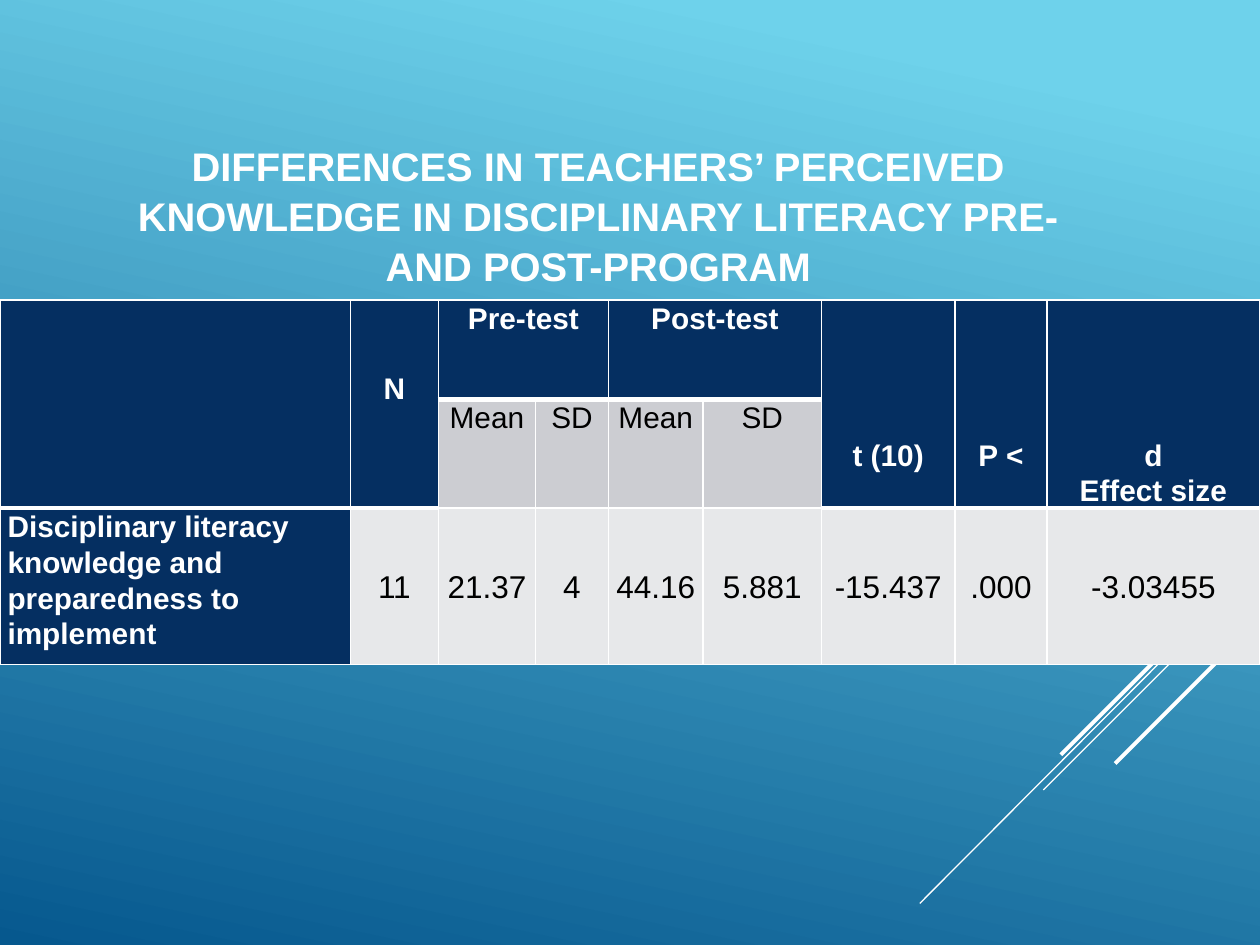
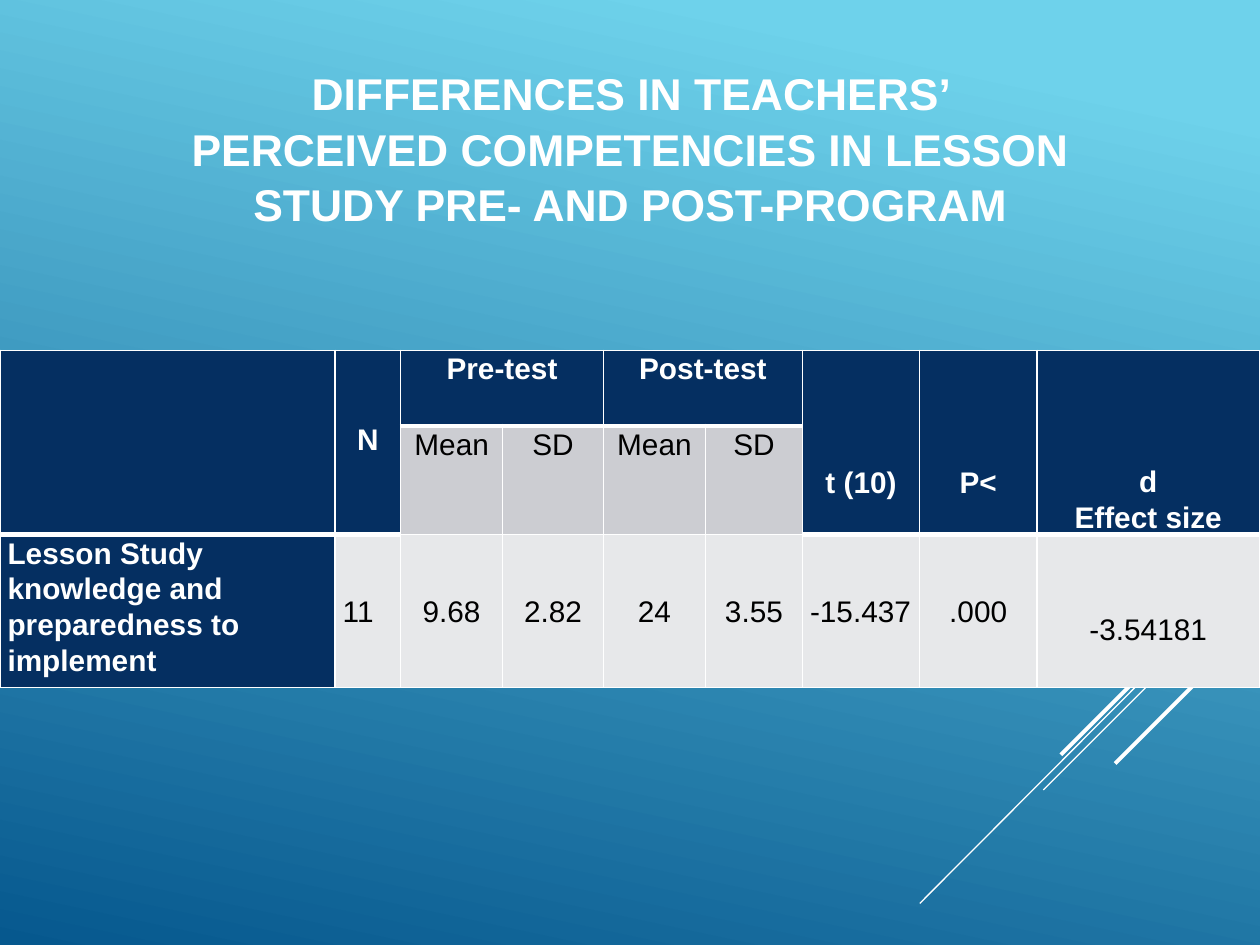
from lxml.etree import SubElement
from pptx import Presentation
from pptx.dml.color import RGBColor
from pptx.enum.shapes import MSO_CONNECTOR
from pptx.enum.text import MSO_ANCHOR as Anchor, PP_ALIGN as Align
from pptx.oxml.ns import qn
from pptx.util import Inches, Pt

FONT = "Arial"
COLORS = {
    "white": "FFFFFF", "black": "000000", "navy": "052F61",
    "subheader": "CCCDD2", "value": "E7E8EA",
    "sky": "6ED2EB", "deep": "06588E",
}
LINE_HEIGHT = 0.28  # one line of table text, in inches

# start x, start y, end x, end y, width in points
RAYS = [
    (10, 4.26, 9.17, 5.09, 0.75),
    (10, 4.46, 7.3, 7.17, 0.75),
    (10, 4.55, 8.28, 6.27, 0.75),
    (9.99, 4.42, 8.42, 5.99, 2.25),
    (9.99, 4.92, 8.85, 6.06, 2.25),
]

# column, columns spanned, rows spanned, text, anchor, lines free above, lines free below
HEADERS = [
    (0, 1, 2, "", Anchor.TOP, 0, 0),
    (1, 1, 2, "N", Anchor.TOP, 2, 0),
    (2, 2, 1, "Pre-test", Anchor.TOP, 0, 0),
    (4, 2, 1, "Post-test", Anchor.TOP, 0, 0),
    (6, 1, 2, "t (10)", Anchor.BOTTOM, 0, 1),
    (7, 1, 2, "{p_label}", Anchor.BOTTOM, 0, 1),
    (8, 1, 2, "d\nEffect size", Anchor.BOTTOM, 0, 0),
]
SUBHEADERS = ["Mean", "SD", "Mean", "SD"]
FIRST_SUBHEADER = 2

RESULTS = [
    {
        "title": "DIFFERENCES IN TEACHERS’ PERCEIVED KNOWLEDGE IN DISCIPLINARY "
                 "LITERACY PRE- AND POST-PROGRAM",
        "title_box": (0.67, 1.13, 8.16, 1.15), "title_size": 22.8,
        "top": 2.38, "rows": [0.79, 0.85, 1.24],
        "columns": [2.78, 0.7, 0.77, 0.58, 0.75, 0.94, 1.06, 0.73, 1.69],
        "p_label": "P <",
        "label": "Disciplinary literacy knowledge and preparedness to implement",
        "values": ["11", "21.37", "4", "44.16", "5.881", "-15.437", ".000", "-3.03455"],
        "value_size": 18, "left_aligned": [], "lowered": [],
    },
    {
        "title": "DIFFERENCES IN TEACHERS’ PERCEIVED COMPETENCIES IN LESSON "
                 "STUDY PRE- AND POST-PROGRAM",
        "title_box": (1.37, 0.5, 7.27, 1.34), "title_size": 25.4,
        "top": 2.78, "rows": [0.6, 0.85, 1.21],
        "columns": [2.66, 0.52, 0.81, 0.8, 0.81, 0.77, 0.93, 0.93, 1.77],
        "p_label": "P<",
        "label": "Lesson Study knowledge and preparedness to implement",
        "values": ["11", "9.68", "2.82", "24", "3.55", "-15.437", ".000", "-3.54181"],
        "value_size": 17, "left_aligned": [1, 6], "lowered": [8],
    },
]


def rgb(name):
    return RGBColor.from_string(COLORS[name])


def style_text(frame, size, color, bold, align, spacing):
    for para in frame.paragraphs:
        para.alignment = align
        para.line_spacing = spacing
        for span in para.runs:
            span.font.name = FONT
            span.font.size = Pt(size)
            span.font.bold = bold
            span.font.color.rgb = rgb(color)


def paint_background(page):
    fill = page.background.fill
    fill.gradient()
    fill.gradient_angle = 258
    for stop, color, position in zip(fill.gradient_stops, ("sky", "deep"), (0.1, 1)):
        stop.color.rgb = rgb(color)
        stop.position = position


def add_rays(page):
    for x1, y1, x2, y2, width in RAYS:
        ray = page.shapes.add_connector(
            MSO_CONNECTOR.STRAIGHT, Inches(x1), Inches(y1), Inches(x2), Inches(y2))
        ray.line.color.rgb = rgb("white")
        ray.line.width = Pt(width)
        SubElement(ray._element.spPr, qn("a:effectLst"))


def add_title(page, result):
    box = page.shapes.add_textbox(*map(Inches, result["title_box"]))
    frame = box.text_frame
    frame.word_wrap = True
    frame.vertical_anchor = Anchor.MIDDLE
    frame.text = result["title"]
    style_text(frame, result["title_size"], "white", True, Align.CENTER, 1.04)


def rule_below(row, column):
    """Width of the rule under a cell: thick where a header cell ends."""
    under_group = FIRST_SUBHEADER <= column < FIRST_SUBHEADER + len(SUBHEADERS)
    return 3 if (row == 0 and under_group) or (row == 1 and not under_group) else 1


def add_borders(cell, row, column):
    properties = cell._tc.get_or_add_tcPr()
    widths = {"L": 1, "R": 1, "T": rule_below(row - 1, column), "B": rule_below(row, column)}
    for side, width in widths.items():
        border = SubElement(properties, qn(f"a:ln{side}"), w=str(Pt(width)))
        SubElement(SubElement(border, qn("a:solidFill")), qn("a:srgbClr"), val=COLORS["white"])


def fill_cell(cell, text, fill, color, bold=False, size=17, align=Align.CENTER,
              anchor=Anchor.TOP, above=0, below=0):
    cell.fill.solid()
    cell.fill.fore_color.rgb = rgb(fill)
    cell.margin_left = cell.margin_right = Inches(0.06)
    cell.margin_top = Inches(above * LINE_HEIGHT)
    cell.margin_bottom = Inches(below * LINE_HEIGHT)
    cell.vertical_anchor = anchor
    cell.text_frame.text = text
    style_text(cell.text_frame, size, color, bold, align, 1.07)


def add_results_table(page, result):
    rows, columns = result["rows"], result["columns"]
    table = page.shapes.add_table(
        len(rows), len(columns), 0, Inches(result["top"]),
        Inches(sum(columns)), Inches(sum(rows))).table
    table.first_row = table.horz_banding = False
    for row, height in zip(table.rows, rows):
        row.height = Inches(height)
    for column, width in zip(table.columns, columns):
        column.width = Inches(width)
    for row in range(len(rows)):
        for column in range(len(columns)):
            add_borders(table.cell(row, column), row, column)

    for column, across, down, text, anchor, above, below in HEADERS:
        cell = table.cell(0, column)
        cell.merge(table.cell(down - 1, column + across - 1))
        fill_cell(cell, text.format(**result), "navy", "white", True,
                  anchor=anchor, above=above, below=below)
    for column, text in enumerate(SUBHEADERS, FIRST_SUBHEADER):
        fill_cell(table.cell(1, column), text, "subheader", "black")
    fill_cell(table.cell(2, 0), result["label"], "navy", "white", True, align=Align.LEFT)
    for column, text in enumerate(result["values"], 1):
        align = Align.LEFT if column in result["left_aligned"] else Align.CENTER
        fill_cell(table.cell(2, column), text, "value", "black",
                  size=result["value_size"], align=align, anchor=Anchor.MIDDLE,
                  above=int(column in result["lowered"]))


def main():
    deck = Presentation()
    deck.slide_width, deck.slide_height = Inches(10), Inches(7.5)
    for result in RESULTS:
        page = deck.slides.add_slide(deck.slide_layouts[6])
        paint_background(page)
        add_rays(page)
        add_title(page, result)
        add_results_table(page, result)
    deck.save("out.pptx")


if __name__ == "__main__":
    main()
